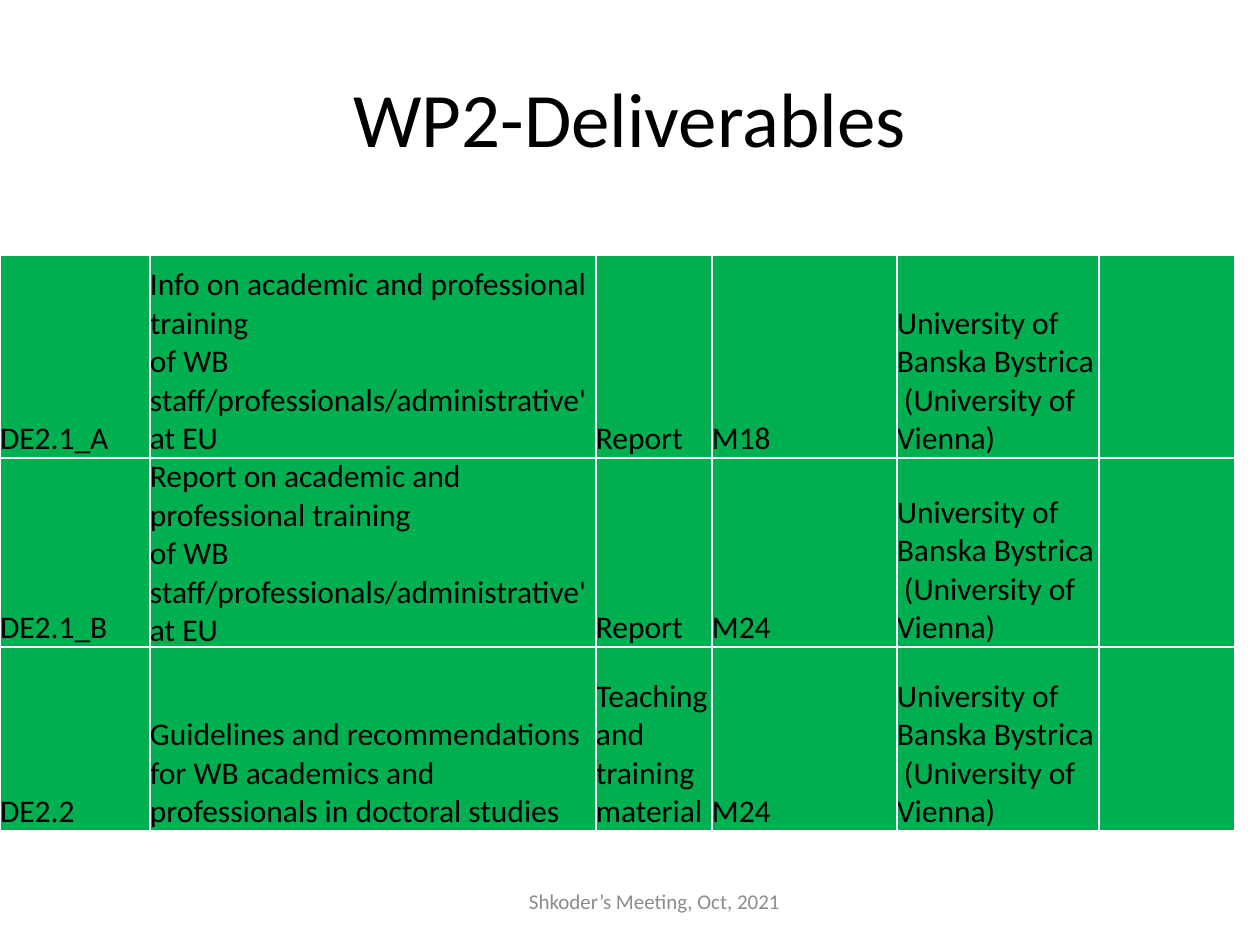
from lxml.etree import SubElement
from pptx import Presentation
from pptx.dml.color import RGBColor
from pptx.enum.text import MSO_ANCHOR as Anchor, PP_ALIGN as Align
from pptx.oxml.ns import qn
from pptx.util import Emu, Pt

SCALE = 914400 // 126
FONT = "Calibri"
BLACK, GRAY, GREEN, WHITE = "000000", "8C8C8C", "00B050", "FFFFFF"

LABELS = [
    ("WP2-Deliverables", (63, 38, 1134, 157), 44, BLACK),
    ("Shkoder’s Meeting, Oct, 2021", (431, 876, 447, 50), 12, GRAY),
]

PARTNER = "University of Banska Bystrica\v (University of Vienna)"
TRAINING = "academic and professional training \vof WB staff/professionals/administrative' at EU"
DELIVERABLES = [
    ("DE2.1_A", f"Info on {TRAINING}", "Report", "M18", PARTNER, ""),
    ("DE2.1_B", f"Report on {TRAINING}", "Report", "M24", PARTNER, ""),
    ("DE2.2", "Guidelines and recommendations for WB academics and professionals in doctoral studies",
     "Teaching and \vtraining material", "M24", PARTNER, ""),
]
TABLE_LEFT, TABLE_TOP = 0, 255
COLUMN_WIDTHS = [150, 446, 116, 185, 202, 136]
ROW_HEIGHTS = [203, 149, 184]
CELL_FORMAT = {
    "vertical_anchor": Anchor.BOTTOM,
    "margin_left": 0, "margin_right": 0, "margin_top": 0, "margin_bottom": 0,
}


def px(length):
    return Emu(length * SCALE)


def color(value):
    return RGBColor.from_string(value)


def apply(target, values):
    for name, value in values.items():
        setattr(target, name, value)


def style_text(paragraph, size, text_color):
    apply(paragraph.font, {"name": FONT, "size": Pt(size), "bold": False})
    paragraph.font.color.rgb = color(text_color)


def add_label(slide, text, box, size, text_color):
    frame = slide.shapes.add_textbox(*map(px, box)).text_frame
    apply(frame, {"text": text, "word_wrap": True, "vertical_anchor": Anchor.MIDDLE})
    paragraph = frame.paragraphs[0]
    paragraph.alignment = Align.CENTER
    style_text(paragraph, size, text_color)


def add_borders(cell):
    properties = cell._tc.get_or_add_tcPr()
    for side in ("lnL", "lnR", "lnT", "lnB"):
        line = SubElement(properties, qn(f"a:{side}"), w=str(Pt(1)))
        fill = SubElement(line, qn("a:solidFill"))
        SubElement(fill, qn("a:srgbClr"), val=WHITE)


def add_deliverables(slide):
    box = (TABLE_LEFT, TABLE_TOP, sum(COLUMN_WIDTHS), sum(ROW_HEIGHTS))
    table = slide.shapes.add_table(
        len(ROW_HEIGHTS), len(COLUMN_WIDTHS), *map(px, box)).table
    apply(table, {"first_row": False, "horz_banding": False})
    for column, width in zip(table.columns, COLUMN_WIDTHS):
        column.width = px(width)
    for row, height, texts in zip(table.rows, ROW_HEIGHTS, DELIVERABLES):
        row.height = px(height)
        for cell, text in zip(row.cells, texts):
            add_borders(cell)
            apply(cell, CELL_FORMAT)
            cell.fill.solid()
            cell.fill.fore_color.rgb = color(GREEN)
            cell.text_frame.text = text
            style_text(cell.text_frame.paragraphs[0], 18, BLACK)


def main():
    presentation = Presentation()
    apply(presentation, {"slide_width": px(1260), "slide_height": px(945)})
    slide = presentation.slides.add_slide(presentation.slide_layouts[6])
    title, footer = LABELS
    add_label(slide, *title)
    add_deliverables(slide)
    add_label(slide, *footer)
    presentation.save("out.pptx")


if __name__ == "__main__":
    main()
